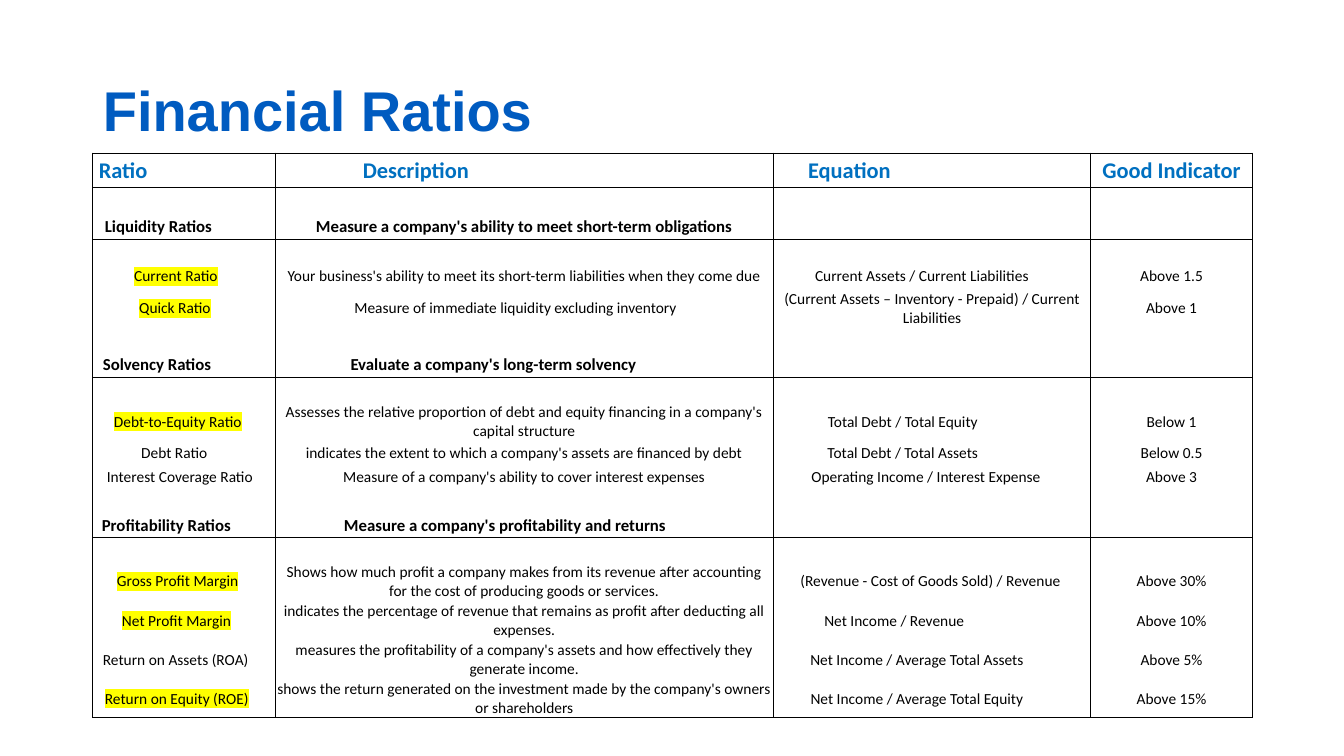
import dataclasses

import lxml.etree
import pptx
import pptx.dml.color
import pptx.enum.text
import pptx.oxml.ns
import pptx.util

Inches = pptx.util.Inches
Pt = pptx.util.Pt
Align = pptx.enum.text.PP_ALIGN
Middle = pptx.enum.text.MSO_ANCHOR.MIDDLE
qn = pptx.oxml.ns.qn

BLUE = pptx.dml.color.RGBColor(0x00, 0x5B, 0xC0)
SKY = pptx.dml.color.RGBColor(0x00, 0x70, 0xC0)
BLACK = pptx.dml.color.RGBColor(0x00, 0x00, 0x00)
YELLOW = pptx.dml.color.RGBColor(0xFF, 0xFF, 0x00)

INSET = 0.01
WIDTHS = (1.81, 4.94, 3.15, 1.6)


@dataclasses.dataclass(frozen=True)
class Style:
    size: int
    color: pptx.dml.color.RGBColor
    bold: bool
    ruled: bool


HEAD = Style(16, SKY, True, True)
GROUP = Style(12, BLACK, True, True)
ITEM = Style(11, BLACK, False, False)
LAST = Style(11, BLACK, False, True)


@dataclasses.dataclass(frozen=True)
class Row:
    """Texts of one row; pads push the centred texts to the left."""
    style: Style = ITEM
    texts: tuple[str, ...] = ("", "", "", "")
    indent: float = INSET
    pads: tuple[float, float] = (INSET, INSET)
    marked: bool = False
    reach: float = 0  # where the marking ends, if beyond the text
    height: float = 0.24


ROWS = (
    Row(HEAD, ("Ratio", "Description", "Equation", "Good Indicator"),
        0.06, (2.16, 1.65), height=0.34),
    Row(height=0.26),
    Row(GROUP, ("Liquidity Ratios",
                "Measure a company's ability to meet short-term obligations", "", ""),
        0.12, height=0.26),
    Row(),
    Row(ITEM, ("Current Ratio",
               "Your business's ability to meet its short-term liabilities when they come due",
               "Current Assets / Current Liabilities", "Above 1.5"),
        0.41, (INSET, 0.21), True, 1.79),
    Row(ITEM, ("Quick Ratio", "Measure of immediate liquidity excluding inventory",
               "(Current Assets – Inventory - Prepaid) / Current Liabilities", "Above 1"),
        0.46, (0.18, INSET), True),
    Row(),
    Row(GROUP, ("Solvency Ratios", "Evaluate a company's long-term solvency", "", ""),
        0.1, (0.62, INSET), height=0.26),
    Row(),
    Row(ITEM, ("Debt-to-Equity Ratio",
               "Assesses the relative proportion of debt and equity financing "
               "in a company's capital structure",
               "Total Debt / Total Equity", "Below 1"),
        0.21, (INSET, 0.59), True),
    Row(ITEM, ("Debt Ratio",
               "indicates the extent to which a company's assets are financed by debt",
               "Total Debt / Total Assets", "Below 0.5"),
        0.48, (INSET, 0.59)),
    Row(ITEM, ("Interest Coverage Ratio",
               "Measure of a company's ability to cover interest expenses",
               "Operating Income / Interest Expense", "Above 3"),
        0.14, (INSET, 0.13)),
    Row(),
    Row(GROUP, ("Profitability Ratios",
                "Measure a company's profitability and returns", "", ""),
        0.09, (0.39, INSET)),
    Row(),
    Row(ITEM, ("Gross Profit Margin",
               "Shows how much profit a company makes from its revenue after accounting "
               "for the cost of producing goods or services.",
               "(Revenue - Cost of Goods Sold) / Revenue", "Above 30%"),
        0.24, (INSET, 0.04), True, 1.79),
    Row(ITEM, ("Net Profit Margin",
               "indicates the percentage of revenue that remains as profit "
               "after deducting all expenses.",
               "Net Income / Revenue", "Above 10%"),
        0.29, (INSET, 0.76), True, 1.79),
    Row(ITEM, ("Return on Assets (ROA)",
               "measures the profitability of a company's assets "
               "and how effectively they generate income.",
               "Net Income / Average Total Assets", "Above 5%"),
        0.1, (INSET, 0.31)),
    Row(LAST, ("Return on Equity (ROE)",
               "shows the return generated on the investment made by the company's "
               "owners or shareholders",
               "Net Income / Average Total Equity", "Above 15%"),
        0.12, (INSET, 0.31), True, 1.62),
)


def add_fill(node, tag: str, color: pptx.dml.color.RGBColor) -> None:
    fill = lxml.etree.SubElement(node, qn(tag))
    lxml.etree.SubElement(fill, qn("a:srgbClr"), val=str(color))


def set_edges(cell, top: bool, bottom: bool) -> None:
    props = cell._tc.get_or_add_tcPr()
    for side, shown in (("L", True), ("R", True), ("T", top), ("B", bottom)):
        line = lxml.etree.SubElement(props, qn(f"a:ln{side}"), w=str(Pt(1)))
        if shown:
            add_fill(line, "a:solidFill", BLACK)
        else:
            lxml.etree.SubElement(line, qn("a:noFill"))


def mark_text(para, row: Row) -> None:
    """Highlight the run, up to a tab stop if the marking reaches on."""
    run = para.runs[0]
    add_fill(run._r.get_or_add_rPr(), "a:highlight", YELLOW)
    if row.reach:
        run.text += "\t"
        tabs = lxml.etree.Element(qn("a:tabLst"))
        stop = Inches(round(row.reach - row.indent, 2))
        lxml.etree.SubElement(tabs, qn("a:tab"), pos=str(stop), algn="l")
        para._p.get_or_add_pPr().insert(0, tabs)


def fill_cell(cell, row: Row, col: int) -> None:
    cell.vertical_anchor = Middle
    cell.margin_left = Inches(row.indent if col == 0 else INSET)
    cell.margin_right = Inches(row.pads[col - 1] if col in (1, 2) else INSET)
    cell.margin_top, cell.margin_bottom = Inches(INSET), 0
    para = cell.text_frame.paragraphs[0]
    para.alignment = Align.LEFT if col == 0 else Align.CENTER
    font = para.font
    font.name, font.size, font.bold = "Calibri", Pt(row.style.size), row.style.bold
    font.color.rgb = row.style.color
    if not row.texts[col]:
        lxml.etree.SubElement(para._p, qn("a:endParaRPr"), sz="1100")
        return
    para.add_run().text = row.texts[col]
    if col == 0 and row.marked:
        mark_text(para, row)


def add_title(slide) -> None:
    title = slide.shapes.title
    title.left, title.top = Inches(0.92), Inches(0.4)
    title.width, title.height = Inches(11.5), Inches(1.45)
    title.text_frame.text = "Financial Ratios"
    title.text_frame.vertical_anchor = Middle
    para = title.text_frame.paragraphs[0]
    para.alignment, para.line_spacing = Align.LEFT, 0.9
    para.font.name, para.font.size, para.font.bold = "Arial", Pt(40), True
    para.font.color.rgb = BLUE


def add_ratios(slide) -> None:
    height = sum(row.height for row in ROWS)
    table = slide.shapes.add_table(len(ROWS), len(WIDTHS), Inches(0.92), Inches(1.52),
                                   Inches(sum(WIDTHS)), Inches(height)).table
    table.first_row = table.horz_banding = False
    for col, width in enumerate(WIDTHS):
        table.columns[col].width = Inches(width)
    top = True
    for num, row in enumerate(ROWS):
        table.rows[num].height = Inches(row.height)
        for col in range(len(WIDTHS)):
            cell = table.cell(num, col)
            set_edges(cell, top, row.style.ruled)
            cell.fill.background()
            fill_cell(cell, row, col)
        top = row.style.ruled


def main() -> None:
    deck = pptx.Presentation()
    deck.slide_width, deck.slide_height = Inches(13.33), Inches(7.5)
    slide = deck.slides.add_slide(deck.slide_layouts[5])
    add_title(slide)
    add_ratios(slide)
    deck.save("out.pptx")


if __name__ == "__main__":
    main()
